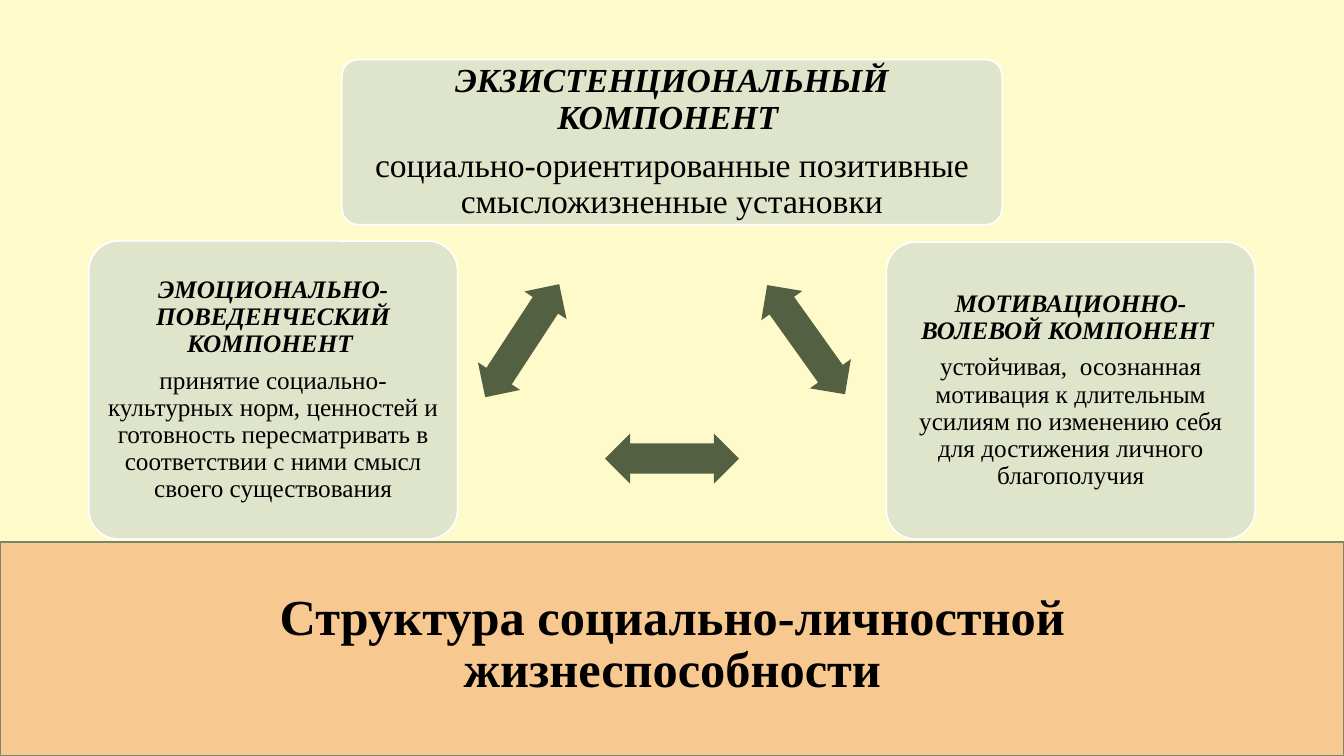
from pptx import Presentation
from pptx.dml.color import RGBColor
from pptx.enum.shapes import MSO_SHAPE
from pptx.enum.text import MSO_ANCHOR, PP_ALIGN
from pptx.util import Inches, Pt

CREAM = RGBColor(0xFE, 0xFA, 0xC9)
PEACH = RGBColor(0xF8, 0xC8, 0x91)
SAGE = RGBColor(0xDF, 0xE5, 0xCA)
SAGE_EDGE = RGBColor(0x7A, 0x86, 0x6C)
MOSS = RGBColor(0x53, 0x61, 0x42)
WHITE = RGBColor(0xFF, 0xFF, 0xFF)
BLACK = RGBColor(0, 0, 0)

RECTANGLE = MSO_SHAPE.RECTANGLE
ROUNDED = MSO_SHAPE.ROUNDED_RECTANGLE
DOUBLE_ARROW = MSO_SHAPE.LEFT_RIGHT_ARROW
MIDDLE, BOTTOM = MSO_ANCHOR.MIDDLE, MSO_ANCHOR.BOTTOM
CENTER = PP_ALIGN.CENTER

FONT = "Times New Roman"
SLIDE_W, SLIDE_H = 13.33, 7.5
BANNER_TOP = 5.38

# Box (left, top, width, height), text size, inset, heading, description
COMPONENTS = [
    ((3.39, 0.59, 6.55, 1.64), 24, 0.1, "ЭКЗИСТЕНЦИОНАЛЬНЫЙ КОМПОНЕНТ ",
     "социально-ориентированные позитивные смысложизненные установки"),
    ((8.79, 2.4, 3.66, 2.95), 18, 0.07, "МОТИВАЦИОННО-ВОЛЕВОЙ КОМПОНЕНТ ",
     "устойчивая,  осознанная мотивация к длительным усилиям "
     "по изменению себя для достижения личного благополучия"),
    ((0.88, 2.39, 3.66, 2.96), 18, 0.07, "ЭМОЦИОНАЛЬНО-ПОВЕДЕНЧЕСКИЙ КОМПОНЕНТ ",
     "принятие социально-культурных норм, ценностей и готовность "
     "пересматривать в соответствии с ними смысл своего существования"),
]

# Box and rotation of each arrow between the components
ARROWS = [
    ((7.33, 3.12, 1.33, 0.5), 54.5),
    ((6, 4.3, 1.33, 0.5), 0),
    ((4.51, 3.13, 1.34, 0.5), -56.8),
]


def set_all(target, values):
    for name, value in values.items():
        setattr(target, name, value)


def add_panel(slide, kind, box, fill, edge=None):
    panel = slide.shapes.add_shape(kind, *map(Inches, box))
    panel.shadow.inherit = False
    panel.fill.solid()
    panel.fill.fore_color.rgb = fill
    if edge is None:
        panel.line.fill.background()
    else:
        panel.line.color.rgb = edge
        panel.line.width = Pt(1.25)
    return panel


def set_frame(frame, anchor, side, end):
    set_all(frame, {
        "word_wrap": True, "vertical_anchor": anchor,
        "margin_left": Inches(side), "margin_right": Inches(side),
        "margin_top": Inches(end), "margin_bottom": Inches(end),
    })


def write(paragraph, text, size, spacing, after=0, bold=False, italic=False):
    set_all(paragraph, {"alignment": CENTER, "line_spacing": spacing,
                        "space_before": Pt(0), "space_after": Pt(after)})
    run = paragraph.add_run()
    run.text = text
    set_all(run.font, {"name": FONT, "size": Pt(size), "bold": bold, "italic": italic})
    run.font.color.rgb = BLACK


def add_banner(slide, box):
    left, top, width, height = box
    add_panel(slide, RECTANGLE, box, PEACH, SAGE_EDGE)
    title_box = (left + 1.14, top + 0.41, width - 2.27, height - 0.99)
    title = slide.shapes.add_textbox(*map(Inches, title_box)).text_frame
    set_frame(title, BOTTOM, 0.1, 0)
    write(title.paragraphs[0], "Структура социально-личностной жизнеспособности",
          36, 0.85, bold=True)


def add_component(slide, box, size, inset, heading, description):
    card = add_panel(slide, ROUNDED, box, SAGE, WHITE)
    card.adjustments[0] = 0.1
    frame = card.text_frame
    set_frame(frame, MIDDLE, inset, inset)
    gap = 0.35 * size
    write(frame.paragraphs[0], heading, size, 0.9, gap, bold=True, italic=True)
    write(frame.add_paragraph(), description, size, 0.9, gap)


def add_arrow(slide, box, rotation):
    arrow = add_panel(slide, DOUBLE_ARROW, box, MOSS)
    arrow.adjustments[0] = 0.6
    arrow.adjustments[1] = 0.5
    arrow.rotation = rotation


def main():
    deck = Presentation()
    deck.slide_width, deck.slide_height = Inches(SLIDE_W), Inches(SLIDE_H)
    slide = deck.slides.add_slide(deck.slide_layouts[6])
    slide.background.fill.solid()
    slide.background.fill.fore_color.rgb = CREAM

    # Title banner along the bottom
    add_banner(slide, (0, BANNER_TOP, SLIDE_W, SLIDE_H - BANNER_TOP))

    # Cycle of three components
    for component in COMPONENTS:
        add_component(slide, *component)
    for box, rotation in ARROWS:
        add_arrow(slide, box, rotation)

    deck.save("out.pptx")


if __name__ == "__main__":
    main()
